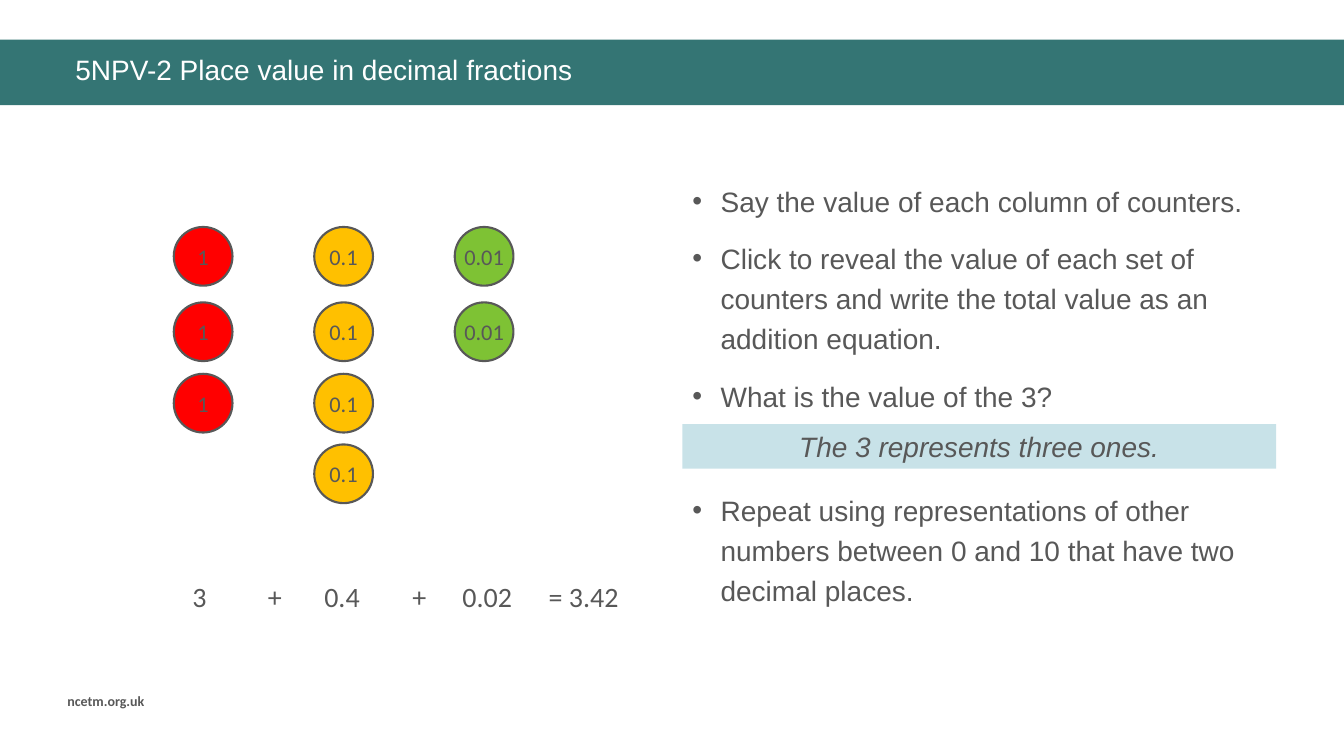
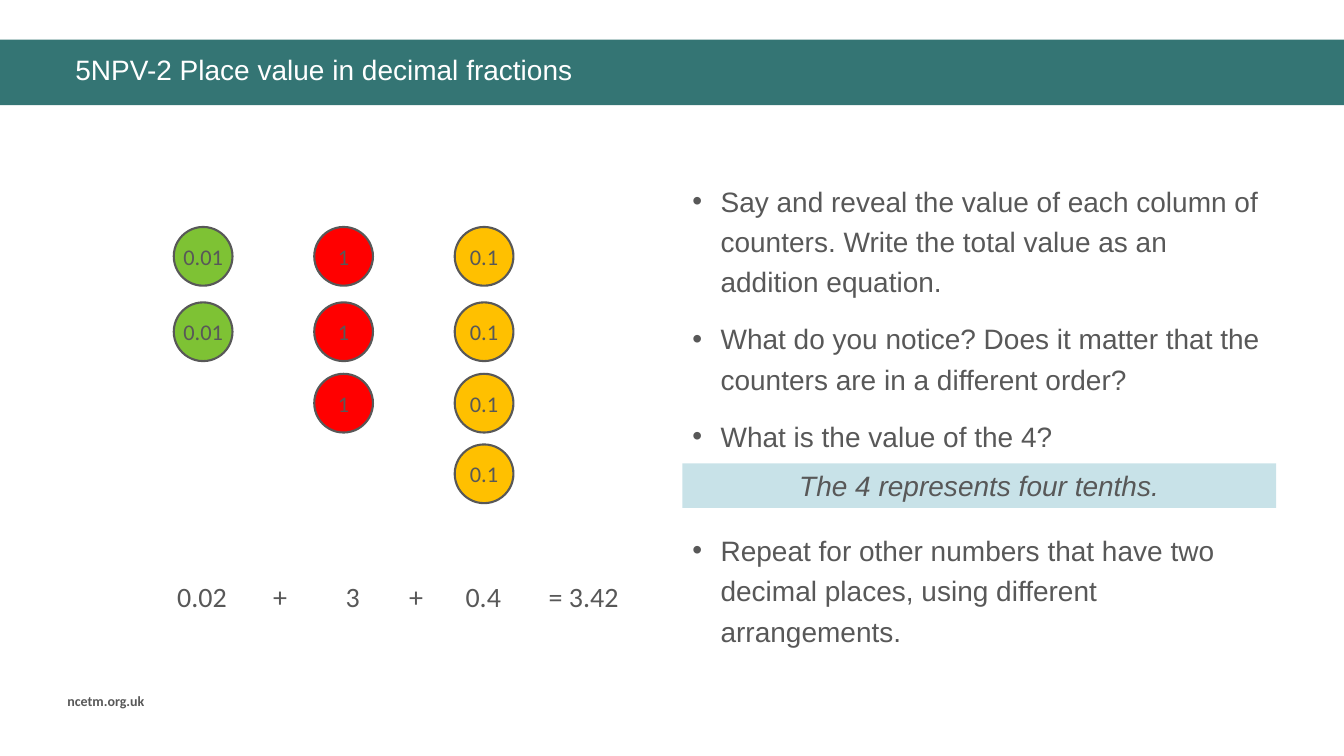
from lxml.etree import SubElement
from pptx import Presentation
from pptx.dml.color import RGBColor
from pptx.enum.shapes import MSO_SHAPE
from pptx.enum.text import MSO_ANCHOR, PP_ALIGN
from pptx.oxml.ns import qn
from pptx.util import Cm, Pt

TEAL, PALE, GREY, WHITE = "347574", "C8E2E8", "585858", "FFFFFF"
WIDTH, HEIGHT = 33.87, 19.05
SIZE, PITCH = 1.48, 3.54
ROWS = (0, 1.9, 3.7, 5.48)
FILLS = {"1": "FF0000", "0.1": "FFC000", "0.01": "7EC234"}
TITLE = "5NPV-2 Place value in decimal fractions"


def paint(fmt, color):
    if hasattr(fmt, "solid"):
        fmt.solid()
        fmt.fore_color.rgb = RGBColor.from_string(color)
    else:
        fmt.color.rgb = RGBColor.from_string(color)


def draw(slide, kind, box, fill, line=None):
    shape = slide.shapes.add_shape(kind, *map(Cm, box))
    shape.shadow.inherit = False
    paint(shape.fill, fill)
    if line:
        paint(shape.line, line)
        shape.line.width = Pt(1.5)
    else:
        shape.line.fill.background()
    return shape


def label(slide, box, text, **style):
    write(slide.shapes.add_textbox(*map(Cm, box)).text_frame, text, **style)


def write(frame, text, size=20, font="Arial", color=GREY, bold=False,
          italic=False, align=PP_ALIGN.LEFT, anchor=MSO_ANCHOR.TOP,
          wrap=True, side=0.25, edge=0.13, space=None, mark=None, gaps=()):
    frame.word_wrap = wrap
    frame.vertical_anchor = anchor
    frame.margin_left = frame.margin_right = Cm(side)
    frame.margin_top = frame.margin_bottom = Cm(edge)
    lines = [text] if isinstance(text, str) else text
    for i, line in enumerate(lines):
        para = frame.add_paragraph() if i else frame.paragraphs[0]
        if mark:
            bullet(para, mark, color)
        para.alignment = align
        if space:
            para.line_spacing = space
        if gaps:
            para.space_before = Pt(gaps[i])
            para.space_after = Pt(6)
        run = para.add_run()
        run.text = line
        face = run.font
        face.name, face.size = font, Pt(size)
        face.bold, face.italic = bold, italic
        paint(face, color)


def bullet(para, mark, color):
    props = para._p.get_or_add_pPr()
    props.set("marL", str(Cm(0.71)))
    props.set("indent", str(-Cm(0.71)))
    tint = SubElement(props, qn("a:buClr"))
    SubElement(tint, qn("a:srgbClr"), val=color)
    SubElement(props, qn("a:buFont"), typeface="Arial")
    SubElement(props, qn("a:buChar"), char=mark)


def frame(slide, box):
    x, y, w, h = box
    draw(slide, MSO_SHAPE.RECTANGLE, (x, y + 1, w, 1.65), TEAL)
    label(slide, (x + 1.65, y + 1.3, w - 2.58, 1.19), TITLE,
          color=WHITE, space=0.9)
    label(slide, (x + 1.45, y + h - 1.73, 3.07, 0.69), "ncetm.org.uk",
          size=10, font="Calibri", bold=True)


def counters(slide, box, piles):
    x, y = box[:2]
    for i, (value, count) in enumerate(piles):
        for row in ROWS[:count]:
            disc = draw(slide, MSO_SHAPE.OVAL,
                        (x + i * PITCH, y + row, SIZE, SIZE),
                        FILLS[value], GREY)
            write(disc.text_frame, value, size=16, font="Calibri",
                  align=PP_ALIGN.CENTER, anchor=MSO_ANCHOR.MIDDLE,
                  wrap=False, side=0, edge=0)


def sums(slide, box, terms):
    x, y, _, h = box
    for text, mid in terms:
        wide = 2.2 if "=" in text else 1.6
        label(slide, (x + mid - wide / 2, y, wide, h), text,
              font="Calibri", align=PP_ALIGN.CENTER, wrap=False, side=0)


def prompts(slide, box, points, answer, drop):
    x, y, w, _ = box
    label(slide, box, points, space=1.2, mark="•",
          gaps=[0] + [6] * (len(points) - 2) + [46.8])
    strip = draw(slide, MSO_SHAPE.RECTANGLE, (x, y + drop, w, 1.12), PALE)
    write(strip.text_frame, answer, italic=True, align=PP_ALIGN.CENTER)


def lesson(deck, piles, terms, points, answer, drop, tall):
    slide = deck.slides.add_slide(deck.slide_layouts[6])
    frame(slide, (0, 0, WIDTH, HEIGHT))
    counters(slide, (4.38, 5.72, 8.56, 6.96), piles)
    sums(slide, (4.38, 14.48, 11.5, 1.12), terms)
    prompts(slide, (17.2, 4.34, 14.96, tall), points, answer, drop)


def main():
    deck = Presentation()
    deck.slide_width, deck.slide_height = Cm(WIDTH), Cm(HEIGHT)
    lesson(
        deck,
        [("1", 3), ("0.1", 4), ("0.01", 2)],
        [("3", 0.65), ("+", 2.55), ("0.4", 4.24), ("+", 6.19),
         ("0.02", 7.9), ("= 3.42", 10.33)],
        ["Say the value of each column of counters.",
         "Click to reveal the value of each set of counters and write the "
         "total value as an addition equation.",
         "What is the value of the 3?",
         "Repeat using representations of other numbers between 0 and 10 "
         "that have two decimal places."],
        "The 3 represents three ones.", 6.35, 11.38)
    lesson(
        deck,
        [("0.01", 2), ("1", 3), ("0.1", 4)],
        [("0.02", 0.71), ("+", 2.68), ("3", 4.51), ("+", 6.11),
         ("0.4", 7.8), ("= 3.42", 10.33)],
        ["Say and reveal the value of each column of counters. Write the "
         "total value as an addition equation.",
         "What do you notice? Does it matter that the counters are in a "
         "different order?",
         "What is the value of the 4?",
         "Repeat for other numbers that have two decimal places, using "
         "different arrangements."],
        "The 4 represents four tenths.", 7.34, 12.32)
    deck.save("out.pptx")


if __name__ == "__main__":
    main()
